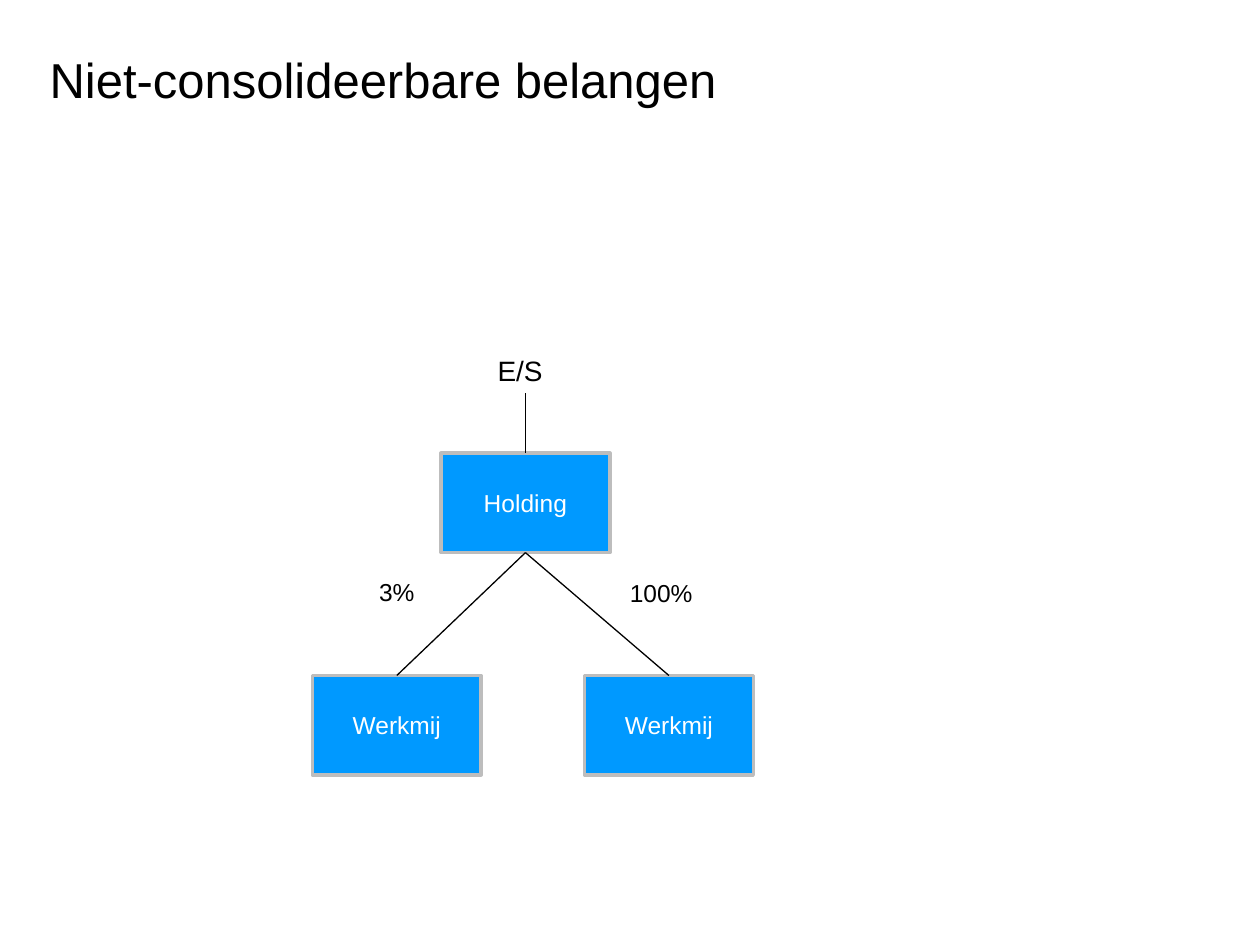
from lxml import etree
from pptx import Presentation
from pptx.dml.color import RGBColor
from pptx.enum import shapes, text
from pptx.oxml import ns
from pptx import util as u

HUES = {"ink": "000000", "box": "0099FF", "edge": "BDBDBD", "pale": "FFFFFF"}
WIDE, HIGH = 96.5, 56.8


class Chart:
    def __init__(self, slide, font="Arial"):
        self.slide = slide
        self.font = font

    def hue(self, name):
        return RGBColor.from_string(HUES[name])

    def put(self, frame, words, size, hue, align):
        para = frame.paragraphs[0]
        para.alignment = align
        run = para.add_run()
        run.text = words
        run.font.name = self.font
        run.font.size = u.Pt(size)
        run.font.color.rgb = self.hue(hue)

    def label(self, words, left, top, width, height, size=14, inset=None):
        frame = self.slide.shapes.add_textbox(
            u.Pt(left), u.Pt(top), u.Pt(width), u.Pt(height)).text_frame
        frame.word_wrap = True
        if inset is not None:
            frame.margin_left = frame.margin_right = u.Pt(inset)
            frame.margin_top = frame.margin_bottom = u.Pt(inset)
        self.put(frame, words, size, "ink", text.PP_ALIGN.LEFT)

    def box(self, words, left, top):
        box = self.slide.shapes.add_shape(
            shapes.MSO_SHAPE.RECTANGLE,
            u.Pt(left), u.Pt(top), u.Pt(WIDE), u.Pt(HIGH))
        box.shadow.inherit = False
        box.fill.solid()
        box.fill.fore_color.rgb = self.hue("box")
        box.line.color.rgb = self.hue("edge")
        box.line.width = u.Pt(2)
        frame = box.text_frame
        frame.vertical_anchor = text.MSO_ANCHOR.MIDDLE
        self.put(frame, words, 14, "pale", text.PP_ALIGN.CENTER)

    def link(self, start, end):
        line = self.slide.shapes.add_connector(
            shapes.MSO_CONNECTOR.STRAIGHT, *map(u.Pt, start + end))
        line.line.color.rgb = self.hue("ink")
        line.line.width = u.Pt(0.75)
        etree.SubElement(line._element.spPr, ns.qn("a:effectLst"))


def main():
    deck = Presentation()
    deck.slide_width, deck.slide_height = u.Pt(720), u.Pt(540)
    chart = Chart(deck.slides.add_slide(deck.slide_layouts[6]))

    chart.label("Niet-consolideerbare belangen", 28.35, 28.35, 663, 113, 28, 0)

    left, top, low = 252, 259, 386
    mid = left + WIDE / 2
    chart.box("Holding", left, top)
    for side in (334, 178.5):
        chart.box("Werkmij", side, low)
        chart.link((mid, top + HIGH), (side + WIDE / 2, low))
    chart.link((mid, top), (mid, 224.6))

    chart.label("E/S", 277.2, 198.7, 57, 26.6, 16)
    chart.label("3%", 209.5, 326.2, 39.6, 24.5)
    chart.label("100%", 352.8, 326.9, 58.3, 24.5)

    deck.save("out.pptx")


if __name__ == "__main__":
    main()
